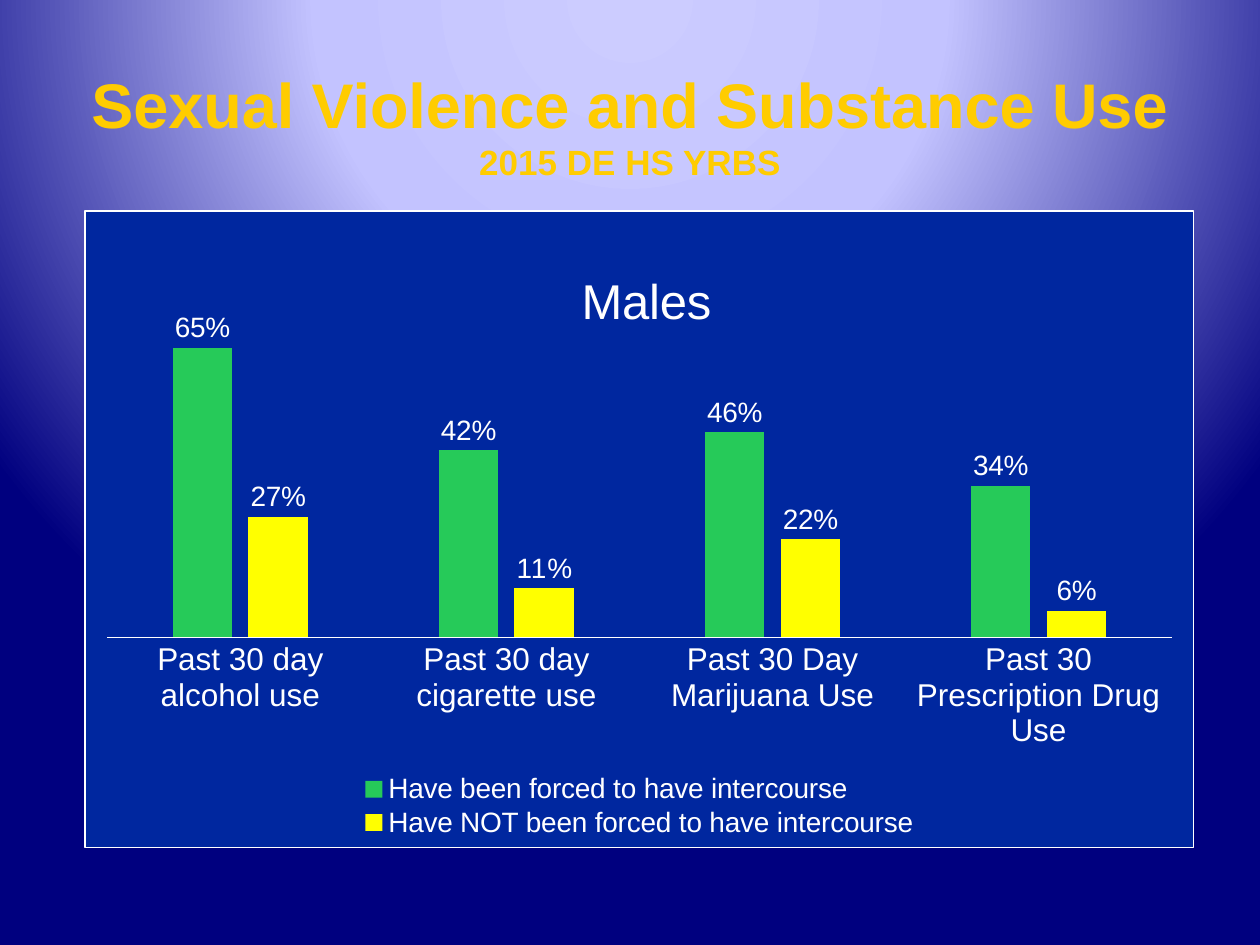
from dataclasses import dataclass

from pptx import Presentation
from pptx import util as u
from pptx.chart.data import CategoryChartData
from pptx.dml.color import RGBColor
from pptx.enum import chart as ch, text
from pptx.oxml import parse_xml
from pptx.oxml.ns import nsdecls, qn

COLORS = {"gold": "FFCC00", "white": "FFFFFF", "panel": "00279F",
          "green": "26CA59", "yellow": "FFFF00"}
BACKDROP = [(0, "CCCCFF"), (40, "C3C3FF"), (100, "00007F")]
FONT = "Arial"
USES = ["Past 30 day alcohol use", "Past 30 day cigarette use",
        "Past 30 Day Marijuana Use", "Past 30 Prescription Drug Use"]


@dataclass
class Group:
    name: str
    shares: list[float]
    color: str


GROUPS = [
    Group("Have been forced to have intercourse", [0.65, 0.42, 0.46, 0.34], "green"),
    Group("Have NOT been forced to have intercourse", [0.27, 0.11, 0.22, 0.06], "yellow"),
]


def rgb(name: str) -> RGBColor:
    return RGBColor.from_string(COLORS[name])


def style(font, size: float, color: str = "white", bold: bool = False) -> None:
    font.name, font.size, font.bold = FONT, u.Pt(size), bold
    font.color.rgb = rgb(color)


def paint_background(slide) -> None:
    stops = "".join(f'<a:gs pos="{pos * 1000}"><a:srgbClr val="{color}"/></a:gs>'
                    for pos, color in BACKDROP)
    slide.element.cSld.insert(0, parse_xml(
        f'<p:bg {nsdecls("p", "a")}><p:bgPr><a:gradFill rotWithShape="1">'
        f'<a:gsLst>{stops}</a:gsLst><a:path path="circle">'
        '<a:fillToRect l="50000" t="-80000" r="50000" b="180000"/></a:path>'
        '</a:gradFill><a:effectLst/></p:bgPr></p:bg>'))


def add_heading(slide) -> None:
    heading = slide.shapes.title
    heading.left, heading.top = u.Inches(0), u.Inches(0.38)
    heading.width, heading.height = u.Inches(10), u.Inches(1.21)
    frame = heading.text_frame
    frame.text = "Sexual Violence and Substance Use\v2015 DE HS YRBS"
    frame.vertical_anchor = text.MSO_ANCHOR.MIDDLE
    line = frame.paragraphs[0]
    line.alignment = text.PP_ALIGN.CENTER
    for run, size in zip(line.runs, (36, 20)):
        style(run.font, size, "gold", True)


def place(part, target: str = "", **fractions: float) -> None:
    for old in part.findall(qn("c:layout")):
        part.remove(old)
    inner = f'<c:layoutTarget val="{target}"/>' if target else ""
    modes = "".join(f'<c:{axis}Mode val="edge"/>' for axis in "xy")
    values = "".join(f'<c:{key} val="{value}"/>' for key, value in fractions.items())
    layout = parse_xml(f'<c:layout {nsdecls("c")}><c:manualLayout>{inner}{modes}'
                       f'{values}</c:manualLayout></c:layout>')
    before = {qn("c:title"): "c:tx", qn("c:legend"): "c:legendPos"}.get(part.tag)
    if before:
        part.find(qn(before)).addnext(layout)
    else:
        part.insert(0, layout)


def add_panel(chart) -> None:
    chart.element.find(qn("c:chart")).addnext(parse_xml(
        f'<c:spPr {nsdecls("c", "a")}><a:solidFill><a:srgbClr val="{COLORS["panel"]}"/>'
        f'</a:solidFill><a:ln w="9525"><a:solidFill><a:srgbClr val="{COLORS["white"]}"/>'
        '</a:solidFill></a:ln></c:spPr>'))


def add_use_chart(slide) -> None:
    data = CategoryChartData(number_format="0%")
    data.categories = USES
    for group in GROUPS:
        data.add_series(group.name, group.shares)
    chart = slide.shapes.add_chart(
        ch.XL_CHART_TYPE.COLUMN_CLUSTERED, u.Inches(0.67), u.Inches(1.67),
        u.Inches(8.81), u.Inches(5.06), data).chart
    style(chart.font, 10)
    add_panel(chart)

    chart.has_title = True
    chart.chart_title.text_frame.text = "Males"
    style(chart.chart_title.text_frame.paragraphs[0].runs[0].font, 28)
    chart.chart_title.include_in_layout = False if hasattr(
        chart.chart_title, "include_in_layout") else None
    place(chart.chart_title._element, x=0.44, y=0.08)

    chart.has_legend = True
    chart.legend.position = ch.XL_LEGEND_POSITION.BOTTOM
    chart.legend.include_in_layout = False
    style(chart.legend.font, 16)
    place(chart.legend._element, x=0.25, y=0.88, w=0.5, h=0.11)

    uses, shares = chart.category_axis, chart.value_axis
    uses.major_tick_mark = ch.XL_TICK_MARK.NONE
    uses.format.line.color.rgb = rgb("white")
    uses.format.line.width = u.Pt(0.75)
    style(uses.tick_labels.font, 18)
    shares.visible = False
    shares.has_major_gridlines = False
    shares.minimum_scale, shares.maximum_scale = 0, 0.7
    shares.tick_labels.number_format = "0%"
    shares.tick_labels.number_format_is_linked = False

    plot = chart.plots[0]
    plot.gap_width, plot.overlap = 219, -27
    plot.vary_by_categories = False
    place(chart.element.find(qn("c:chart")).find(qn("c:plotArea")), "inner",
          x=0.02, y=0.18, w=0.96, h=0.49)
    for bars, group in zip(plot.series, GROUPS):
        bars.format.fill.solid()
        bars.format.fill.fore_color.rgb = rgb(group.color)
        bars.invert_if_negative = False
        labels = bars.data_labels
        labels.show_value = True
        labels.position = ch.XL_LABEL_POSITION.OUTSIDE_END
        labels.number_format, labels.number_format_is_linked = "0%", False
        style(labels.font, 16)


def main() -> None:
    deck = Presentation()
    deck.slide_width, deck.slide_height = u.Inches(10), u.Inches(7.5)
    slide = deck.slides.add_slide(deck.slide_layouts[5])
    paint_background(slide)
    add_heading(slide)
    add_use_chart(slide)
    deck.save("out.pptx")


if __name__ == "__main__":
    main()
